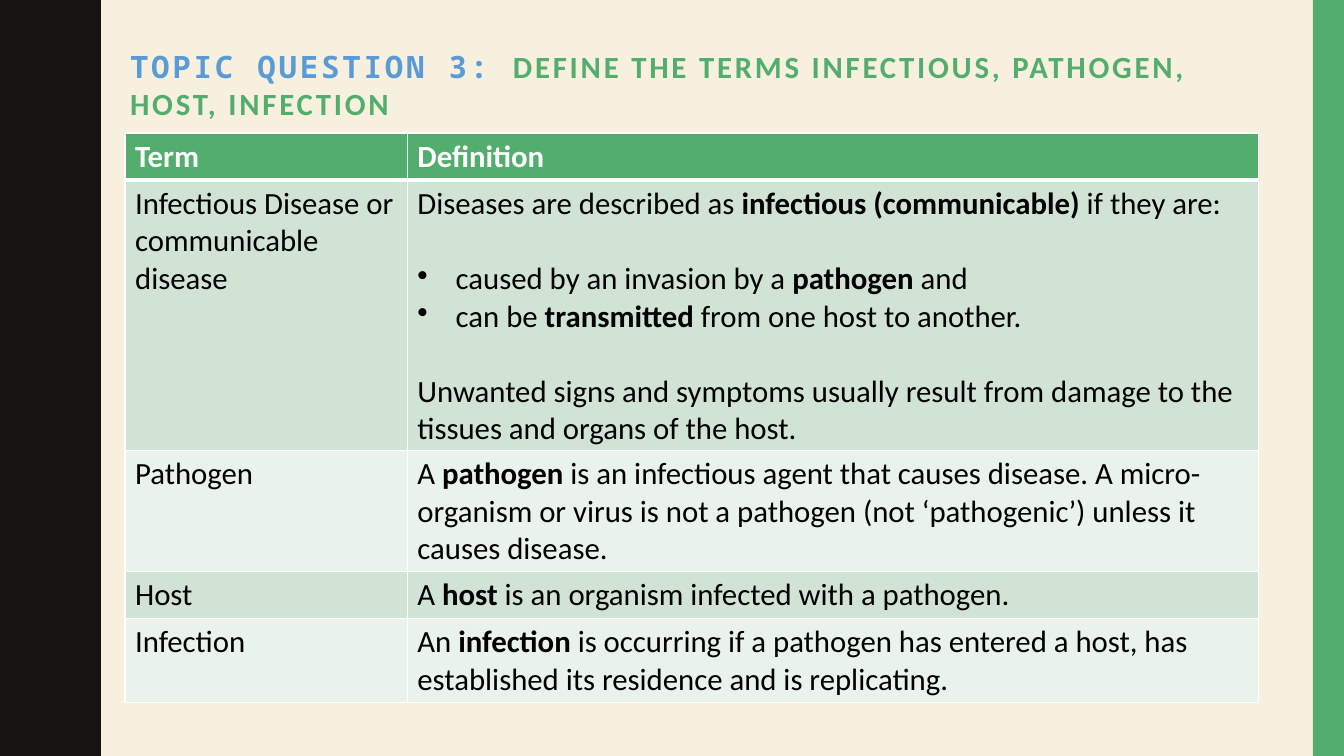
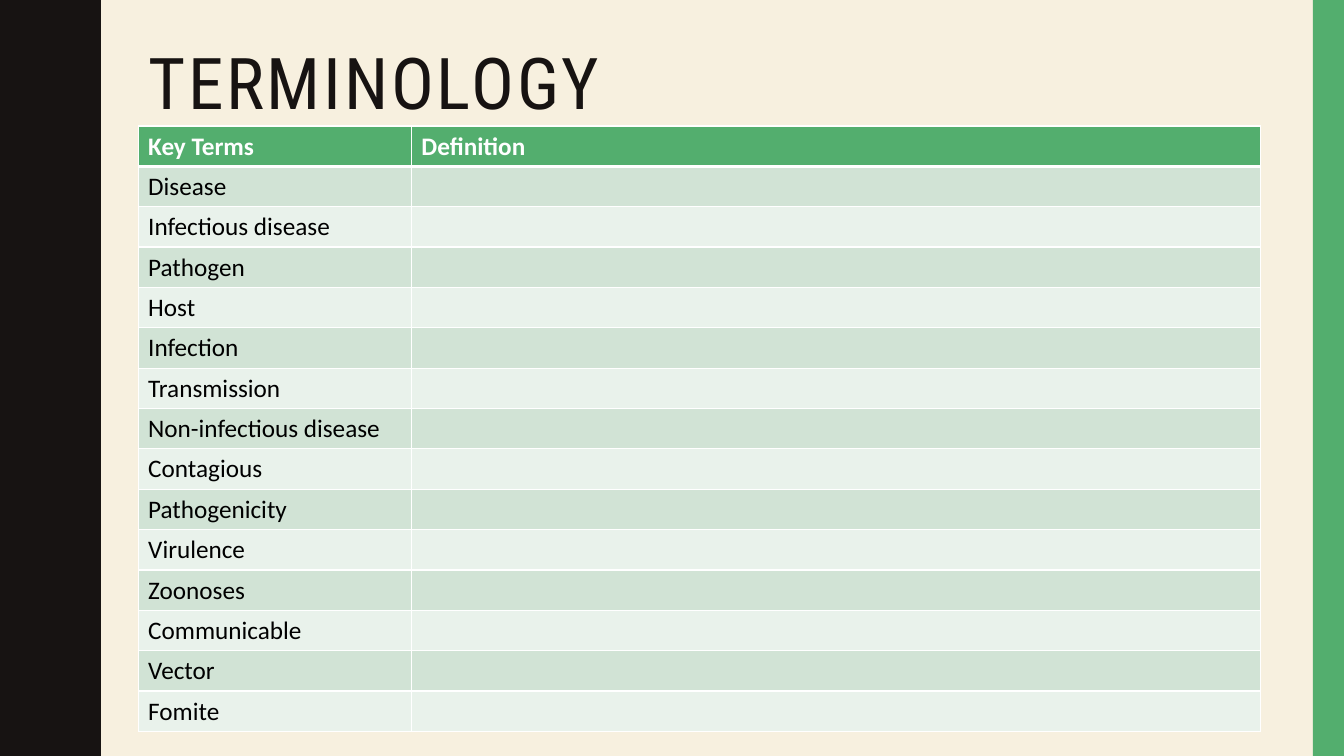
"""Two slides on infectious disease: a table of definitions and a blank terminology table."""
from lxml import etree
from pptx import Presentation
from pptx.dml.color import RGBColor
from pptx.enum.shapes import MSO_SHAPE
from pptx.oxml.ns import qn
from pptx.util import Inches, Pt

CREAM = RGBColor(0xF7, 0xF0, 0xDF)
INK = RGBColor(0x17, 0x13, 0x12)
GREEN = RGBColor(0x53, 0xAE, 0x6E)
BLUE = RGBColor(0x5B, 0x9B, 0xD5)
WHITE = RGBColor(0xFF, 0xFF, 0xFF)
BLACK = RGBColor(0, 0, 0)
ROW_FILLS = [RGBColor(0xE9, 0xF2, 0xEB), RGBColor(0xD1, 0xE3, 0xD5)]

ROW_HEIGHT = 0.4
BULLET_INDENT = Inches(0.38)
WAVE_LENGTH = 1.5
HALF_WAVE = [
    (0.78, 0), (0.78, 0.07), (0.79, 0.14), (0.8, 0.2), (0.81, 0.25),
    (0.83, 0.29), (0.85, 0.33), (0.87, 0.38), (0.89, 0.42), (0.91, 0.46),
    (0.93, 0.5), (0.95, 0.55), (0.96, 0.61), (0.97, 0.68), (0.97, 0.75),
]
WAVE = HALF_WAVE + [(x, WAVE_LENGTH - y) for x, y in reversed(HALF_WAVE[:-1])]
WAVE_EDGE = [(x, y + n * WAVE_LENGTH) for n in range(5) for x, y in WAVE]

BLUE_MONO = {"name": "Noto Sans Mono", "size": Pt(22), "bold": True, "color": BLUE}
GREEN_BOLD = {"name": "Calibri", "size": Pt(22), "bold": True, "color": GREEN}
LARGE_TITLE = {"name": "Roboto Condensed", "size": Pt(51), "bold": False, "color": INK}

KEY_TERMS = [
    "Disease", "Infectious disease", "Pathogen", "Host", "Infection",
    "Transmission", "Non-infectious disease", "Contagious", "Pathogenicity",
    "Virulence", "Zoonoses", "Communicable", "Vector", "Fomite",
]
DEFINITIONS = [
    ("Term", ["Definition"]),
    ("Infectious Disease or communicable disease", [
        "Diseases are described as **infectious (communicable) **if they are:",
        "• caused by an invasion by a** pathogen **and",
        "• can be **transmitted** from one host to another.",
        "Unwanted signs and symptoms usually result from damage to the "
        "tissues and organs of the host.",
    ]),
    ("Pathogen", [
        "A **pathogen** is an infectious agent that causes disease. A micro-organism "
        "or virus is not a pathogen (not ‘pathogenic’) unless it causes disease.",
    ]),
    ("Host", ["A **host** is an organism infected with a pathogen."]),
    ("Infection", [
        "An** infection **is occurring if a pathogen has entered a host, has "
        "established its residence and is replicating.",
    ]),
]
SLIDES = [
    {
        "title": [("TOPIC QUESTION 3: ", BLUE_MONO),
                  ("DEFINE THE TERMS INFECTIOUS, PATHOGEN, HOST, INFECTION", GREEN_BOLD)],
        "title_at": (1.29, 0.47, 11.13, 0.8),
        "title_spacing": 1.0,
        "table_at": (1.24, 1.32),
        "columns": (2.8, 8.44),
        "size": 22,
        "rows": DEFINITIONS,
    },
    {
        "title": [("TERMINOLOGY", LARGE_TITLE)],
        "title_at": (1.47, 0.47, 10.93, 0.75),
        "title_spacing": 0.9,
        "table_at": (1.37, 1.25),
        "columns": (2.71, 8.42),
        "size": 18,
        "rows": [("Key Terms", ["Definition"])] + [(term, [""]) for term in KEY_TERMS],
    },
]


def add_run(paragraph, text, look):
    """Append text to a paragraph in the given look."""
    run = paragraph.add_run()
    run.text = text
    for attribute, value in look.items():
        if attribute == "color":
            run.font.color.rgb = value
        else:
            setattr(run.font, attribute, value)
    return run


def add_borders(cell, widths):
    """Give a cell white borders, with widths in points by side."""
    properties = cell._tc.get_or_add_tcPr()
    for side, width in widths.items():
        line = etree.SubElement(properties, qn(f"a:ln{side}"), w=str(Pt(width)))
        solid = etree.SubElement(line, qn("a:solidFill"))
        etree.SubElement(solid, qn("a:srgbClr"), val=str(WHITE))


presentation = Presentation()
presentation.slide_width = Inches(13.33)
presentation.slide_height = Inches(7.5)
backdrop = presentation.slide_master.background.fill
backdrop.solid()
backdrop.fore_color.rgb = CREAM

for content in SLIDES:
    slide = presentation.slides.add_slide(presentation.slide_layouts[6])

    outline = slide.shapes.build_freeform(0, 0, scale=Inches(1))
    outline.add_line_segments(WAVE_EDGE + [(0, 7.5)], close=True)
    wavy_band = outline.convert_to_shape()
    right_band = slide.shapes.add_shape(
        MSO_SHAPE.RECTANGLE, Inches(13.02), 0, Inches(0.31), Inches(7.5))
    for band, color in ((wavy_band, INK), (right_band, GREEN)):
        band.shadow.inherit = False
        band.fill.solid()
        band.fill.fore_color.rgb = color
        band.line.fill.background()

    title = slide.shapes.add_textbox(*map(Inches, content["title_at"])).text_frame
    title_format = {"word_wrap": True, "margin_left": 0, "margin_top": 0,
                    "margin_right": 0, "margin_bottom": 0}
    for attribute, value in title_format.items():
        setattr(title, attribute, value)
    title.paragraphs[0].line_spacing = content["title_spacing"]
    for text, look in content["title"]:
        run = add_run(title.paragraphs[0], text, look)
        run.font._element.set("spc", "200")

    rows, columns = content["rows"], content["columns"]
    left, top = content["table_at"]
    table = slide.shapes.add_table(
        len(rows), len(columns), Inches(left), Inches(top),
        Inches(sum(columns)), Inches(ROW_HEIGHT * len(rows))).table
    for column, width in zip(table.columns, columns):
        column.width = Inches(width)

    for row_index, (term, definition) in enumerate(rows):
        is_header = row_index == 0
        borders = {"L": 1, "R": 1, "T": 3 if row_index == 1 else 1, "B": 3 if is_header else 1}
        for column_index, lines in enumerate(([term], definition)):
            cell = table.cell(row_index, column_index)
            add_borders(cell, borders)
            cell.fill.solid()
            cell.fill.fore_color.rgb = GREEN if is_header else ROW_FILLS[row_index % 2]
            was_bullet = False
            for line_index, line in enumerate(lines):
                frame = cell.text_frame
                paragraph = frame.add_paragraph() if line_index else frame.paragraphs[0]
                paragraph.font.size = Pt(content["size"])
                is_bullet = line.startswith("• ")
                if is_bullet != was_bullet:
                    paragraph.space_before = Pt(27)
                if is_bullet:
                    properties = paragraph._p.get_or_add_pPr()
                    properties.set("marL", str(BULLET_INDENT))
                    properties.set("indent", str(-BULLET_INDENT))
                    bullet = etree.Element(qn("a:buChar"), char="•")
                    properties.insert_element_before(bullet, "a:tabLst", "a:defRPr", "a:extLst")
                was_bullet = is_bullet
                for part_index, part in enumerate(line.removeprefix("• ").split("**")):
                    if part:
                        add_run(paragraph, part, {
                            "name": "Calibri", "size": Pt(content["size"]),
                            "bold": is_header or part_index % 2 == 1,
                            "color": WHITE if is_header else BLACK})

presentation.save("out.pptx")
